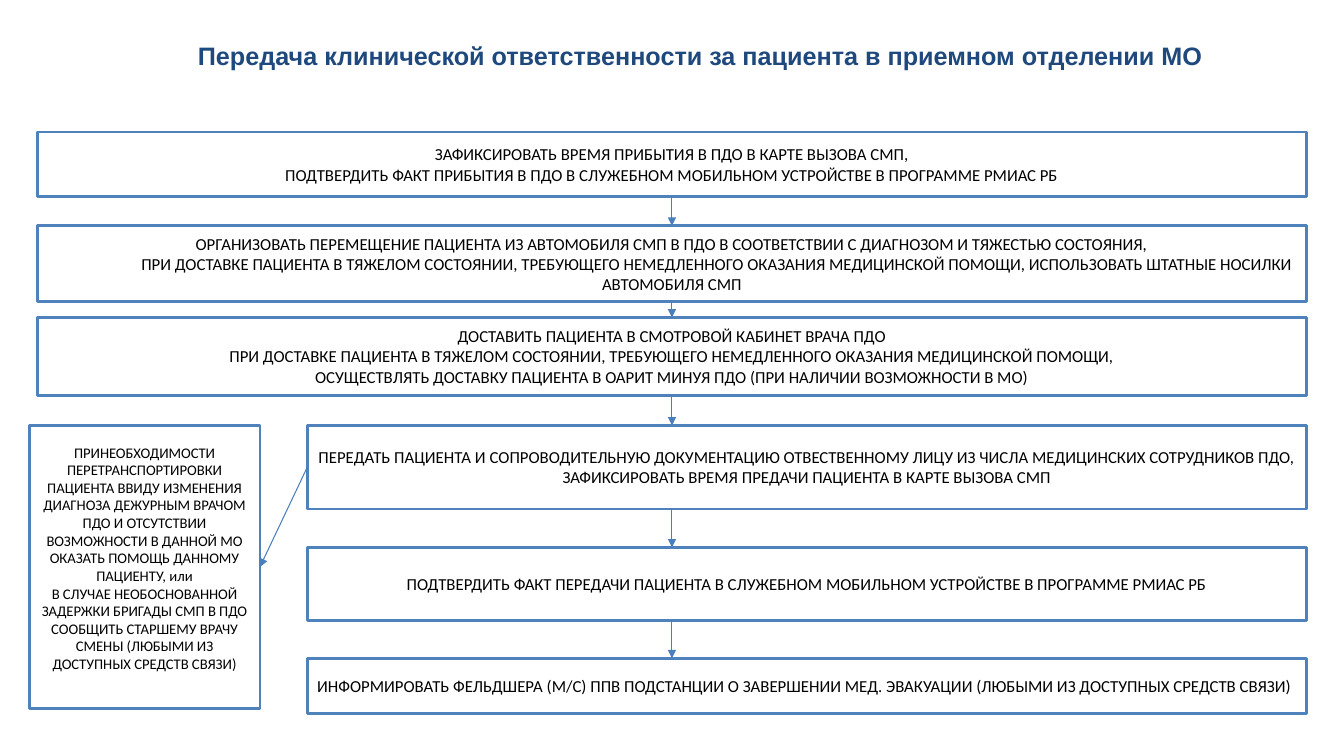
from dataclasses import dataclass
from itertools import pairwise

from lxml.etree import SubElement
from pptx import Presentation
from pptx.dml.color import RGBColor
from pptx.enum.shapes import MSO_CONNECTOR, MSO_SHAPE
from pptx.enum.text import MSO_ANCHOR, PP_ALIGN
from pptx.oxml.ns import qn
from pptx.util import Inches, Pt


@dataclass(frozen=True)
class Theme:
    title_font: str = "Arial"
    body_font: str = "Calibri"
    title_color: str = "1F497D"
    text_color: str = "000000"
    box_fill: str = "FFFFFF"
    box_line: str = "4F81BD"
    arrow_color: str = "4B7EBC"
    title_size: float = 18
    step_size: float = 12
    note_size: float = 10.5
    box_width: float = 2
    arrow_width: float = 0.75


def write_text(frame, lines, *, font, size, color, bold=False,
               align=PP_ALIGN.CENTER, indents=None):
    """Fill a text frame; indents maps a line number to its first-line indent."""
    frame.word_wrap = True
    frame.vertical_anchor = MSO_ANCHOR.MIDDLE
    for number, line in enumerate(lines):
        paragraph = frame.add_paragraph() if number else frame.paragraphs[0]
        paragraph.alignment = align
        if indents and number in indents:
            properties = paragraph._p.get_or_add_pPr()
            properties.set("marL", "0")
            properties.set("indent", str(Inches(indents[number])))
        run = paragraph.add_run()
        run.text = line
        run.font.name = font
        run.font.size = Pt(size)
        run.font.bold = bold
        run.font.color.rgb = RGBColor.from_string(color)


class FlowSlide:
    def __init__(self, presentation, theme):
        self.theme = theme
        self.slide = presentation.slides.add_slide(presentation.slide_layouts[5])

    def title(self, text, left, top, width, height):
        shape = self.slide.shapes.title
        shape.left, shape.top = Inches(left), Inches(top)
        shape.width, shape.height = Inches(width), Inches(height)
        write_text(shape.text_frame, [text], font=self.theme.title_font,
                   size=self.theme.title_size, color=self.theme.title_color, bold=True)

    def box(self, lines, left, top, width, height, size=None, **text_format):
        shape = self.slide.shapes.add_shape(
            MSO_SHAPE.FLOWCHART_PROCESS,
            Inches(left), Inches(top), Inches(width), Inches(height))
        shape.shadow.inherit = False
        shape.fill.solid()
        shape.fill.fore_color.rgb = RGBColor.from_string(self.theme.box_fill)
        shape.line.color.rgb = RGBColor.from_string(self.theme.box_line)
        shape.line.width = Pt(self.theme.box_width)
        write_text(shape.text_frame, lines, font=self.theme.body_font,
                   size=size or self.theme.step_size,
                   color=self.theme.text_color, **text_format)
        return shape

    def arrow(self, start_x, start_y, end_x, end_y):
        connector = self.slide.shapes.add_connector(
            MSO_CONNECTOR.STRAIGHT, start_x, start_y, end_x, end_y)
        connector.line.color.rgb = RGBColor.from_string(self.theme.arrow_color)
        connector.line.width = Pt(self.theme.arrow_width)
        SubElement(connector.line._get_or_add_ln(), qn("a:tailEnd"), type="triangle")
        SubElement(connector._element.spPr, qn("a:effectLst"))
        return connector


# Steps: top, height, left edge, lines, text format
WIDE_LEFT, NARROW_LEFT, RIGHT_EDGE = 0.37, 3.05, 12.97
STEPS = [
    (1.31, 0.64, WIDE_LEFT, [
        "ЗАФИКСИРОВАТЬ ВРЕМЯ ПРИБЫТИЯ В ПДО В КАРТЕ ВЫЗОВА СМП,",
        "ПОДТВЕРДИТЬ ФАКТ ПРИБЫТИЯ В ПДО В СЛУЖЕБНОМ МОБИЛЬНОМ УСТРОЙСТВЕ В ПРОГРАММЕ РМИАС РБ",
    ], {}),
    (2.24, 0.75, WIDE_LEFT, [
        "ОРГАНИЗОВАТЬ ПЕРЕМЕЩЕНИЕ ПАЦИЕНТА ИЗ АВТОМОБИЛЯ СМП В ПДО В СООТВЕТСТВИИ С ДИАГНОЗОМ И ТЯЖЕСТЬЮ СОСТОЯНИЯ,",
        "ПРИ ДОСТАВКЕ ПАЦИЕНТА В ТЯЖЕЛОМ СОСТОЯНИИ, ТРЕБУЮЩЕГО НЕМЕДЛЕННОГО ОКАЗАНИЯ МЕДИЦИНСКОЙ ПОМОЩИ, "
        "ИСПОЛЬЗОВАТЬ ШТАТНЫЕ НОСИЛКИ АВТОМОБИЛЯ СМП",
    ], {"indents": {1: 0.9}}),
    (3.15, 0.77, WIDE_LEFT, [
        "ДОСТАВИТЬ ПАЦИЕНТА В СМОТРОВОЙ КАБИНЕТ ВРАЧА ПДО",
        "ПРИ ДОСТАВКЕ ПАЦИЕНТА В ТЯЖЕЛОМ СОСТОЯНИИ, ТРЕБУЮЩЕГО НЕМЕДЛЕННОГО ОКАЗАНИЯ МЕДИЦИНСКОЙ ПОМОЩИ,",
        "ОСУЩЕСТВЛЯТЬ ДОСТАВКУ ПАЦИЕНТА В ОАРИТ МИНУЯ ПДО (ПРИ НАЛИЧИИ ВОЗМОЖНОСТИ В МО)",
    ], {}),
    (4.22, 0.83, NARROW_LEFT, [
        "ПЕРЕДАТЬ ПАЦИЕНТА И СОПРОВОДИТЕЛЬНУЮ ДОКУМЕНТАЦИЮ ОТВЕСТВЕННОМУ ЛИЦУ ИЗ ЧИСЛА МЕДИЦИНСКИХ "
        "СОТРУДНИКОВ ПДО, ЗАФИКСИРОВАТЬ ВРЕМЯ ПРЕДАЧИ ПАЦИЕНТА В КАРТЕ ВЫЗОВА СМП",
    ], {}),
    (5.43, 0.73, NARROW_LEFT, [
        "ПОДТВЕРДИТЬ ФАКТ ПЕРЕДАЧИ ПАЦИЕНТА В СЛУЖЕБНОМ МОБИЛЬНОМ УСТРОЙСТВЕ В ПРОГРАММЕ РМИАС РБ",
    ], {}),
    (6.53, 0.55, NARROW_LEFT, [
        "ИНФОРМИРОВАТЬ ФЕЛЬДШЕРА (М/С) ППВ ПОДСТАНЦИИ О ЗАВЕРШЕНИИ МЕД. ЭВАКУАЦИИ "
        "(ЛЮБЫМИ ИЗ ДОСТУПНЫХ СРЕДСТВ СВЯЗИ)",
    ], {"align": PP_ALIGN.LEFT}),
]
HANDOVER_STEP = 3

RETRANSPORT_NOTE = [
    "ПРИНЕОБХОДИМОСТИ ПЕРЕТРАНСПОРТИРОВКИ ПАЦИЕНТА ВВИДУ ИЗМЕНЕНИЯ ДИАГНОЗА ДЕЖУРНЫМ ВРАЧОМ ПДО "
    "И ОТСУТСТВИИ ВОЗМОЖНОСТИ В ДАННОЙ МО ОКАЗАТЬ ПОМОЩЬ ДАННОМУ ПАЦИЕНТУ, или",
    "В СЛУЧАЕ НЕОБОСНОВАННОЙ ЗАДЕРЖКИ БРИГАДЫ СМП В ПДО",
    "СООБЩИТЬ СТАРШЕМУ ВРАЧУ СМЕНЫ (ЛЮБЫМИ ИЗ ДОСТУПНЫХ СРЕДСТВ СВЯЗИ)",
]


def main():
    presentation = Presentation()
    presentation.slide_width, presentation.slide_height = Inches(13.34), Inches(7.5)
    theme = Theme()
    flow = FlowSlide(presentation, theme)
    flow.title("Передача клинической ответственности за пациента в приемном отделении МО",
               1.17, 0.22, 11.56, 0.66)

    # Main chain of steps
    steps = [flow.box(lines, left, top, RIGHT_EDGE - left, height, **text_format)
             for top, height, left, lines, text_format in STEPS]

    # Arrows down the middle of the wide boxes
    axis = steps[0].left + steps[0].width // 2
    for upper, lower in pairwise(steps):
        flow.arrow(axis, upper.top + upper.height, axis, lower.top)

    # Side branch, with its text set slightly above the middle
    note = flow.box(RETRANSPORT_NOTE, 0.29, 4.22, 2.29, 2.81, size=theme.note_size)
    note.text_frame.margin_bottom = Inches(0.23)
    handover = steps[HANDOVER_STEP]
    branch = flow.arrow(handover.left, handover.top + handover.height // 2,
                        note.left + note.width, note.top + note.height // 2)
    branch.begin_connect(handover, 1)
    branch.end_connect(note, 3)

    presentation.save("out.pptx")


if __name__ == "__main__":
    main()
